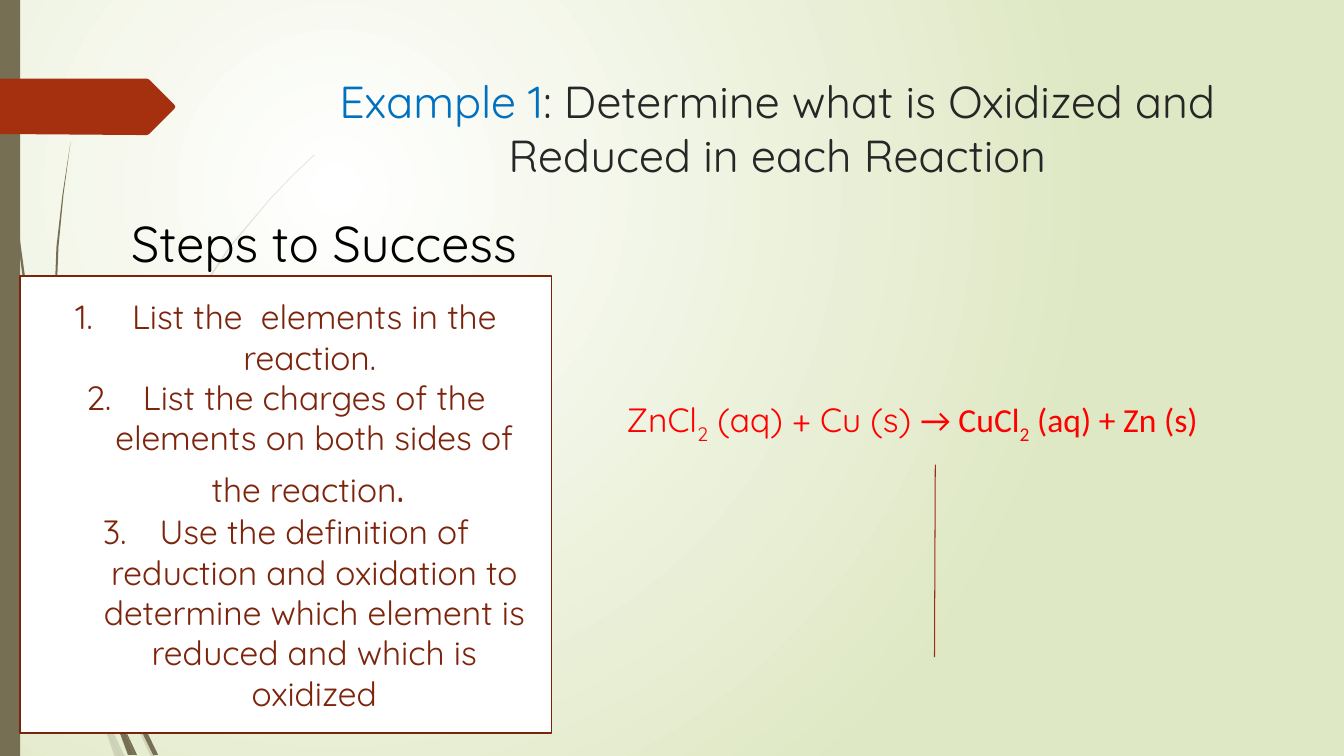
from dataclasses import dataclass, field

from pptx import Presentation
from pptx.dml.color import RGBColor
from pptx.enum.shapes import MSO_CONNECTOR as CONN, MSO_SHAPE as SHAPE
from pptx.enum.text import MSO_ANCHOR as ANCHOR, MSO_AUTO_SIZE as AUTO, PP_ALIGN as ALIGN
from pptx.oxml import parse_xml
from pptx.oxml.ns import nsdecls, qn
from pptx.oxml.xmlchemy import OxmlElement
from pptx.util import Cm, Pt

OLIVE, RUST, BROWN = "766F54", "A53010", "7C240C"
BLUE, INK, RED = "0070C0", "262626", "FF0000"
POINT_UNIT = Cm(0.0254)  # outline points are hundredths of an inch


@dataclass
class Run:
    text: str
    size: float
    color: str
    font: str = "Quicksand"
    baseline: int = 0


@dataclass
class Outline:
    points: list[tuple[int, int]]
    color: str = OLIVE
    alpha: int = 100


@dataclass
class TextBox:
    box: tuple[float, float, float, float]
    runs: list[Run]
    fmt: dict = field(default_factory=lambda: {"word_wrap": True})


FAINT_WISPS = [
    [(11, 350), (9, 322), (0, 282), (0, 299), (10, 344)],
    [(58, 522), (84, 599), (85, 586), (62, 520), (14, 345), (17, 376)],
    [(92, 607), (88, 596), (88, 610), (123, 694), (150, 751), (155, 751), (127, 692)],
    [(119, 751), (124, 751), (105, 711)],
    [(93, 683), (70, 619), (31, 469), (17, 376), (11, 350), (28, 470), (65, 621),
     (92, 693), (101, 714), (99, 707)],
    [(88, 584), (110, 462), (160, 349), (229, 245), (268, 198), (290, 175), (312, 154),
     (312, 153), (289, 175), (268, 197), (228, 244), (158, 348), (107, 461), (85, 584),
     (85, 586), (88, 596)],
    [(101, 714), (114, 751), (119, 751)],
    [(96, 692), (93, 683), (99, 707), (101, 714), (119, 751), (105, 711)],
]
SOLID_WISPS = [
    [(7, 110), (17, 233), (33, 355), (56, 477), (57, 481), (55, 457), (55, 453), (36, 355),
     (19, 232), (8, 109), (5, 48), (4, 0), (3, 0), (4, 48)],
    [(113, 649), (110, 641), (111, 656), (132, 708), (152, 749), (157, 749), (136, 706)],
    [(60, 472), (58, 453), (54, 349), (58, 245), (63, 193), (70, 141), (62, 193), (56, 245),
     (52, 349), (55, 449)],
    [(133, 749), (136, 749), (122, 719)],
    [(117, 722), (127, 749), (131, 749)],
    [(116, 706), (110, 691), (116, 717), (117, 722), (130, 749), (133, 749), (122, 719)],
]
TITLE_TAG = [(173, 108), (148, 133), (146, 134), (136, 134), (0, 133), (0, 78), (136, 78),
             (146, 78), (148, 79), (173, 104), (174, 106)]

TEXTS = [
    TextBox((7.21, 1.73, 24.77, 3.56), [
        Run("Example 1", 32, BLUE),
        Run(": Determine what is Oxidized and Reduced in each Reaction", 32, INK),
    ]),
    TextBox((13.51, 6.6, 18.95, 10.49), [
        Run("ZnCl", 24, RED),
        Run("2", 24, RED, baseline=-25),
        Run(" (aq) + Cu (s) ", 24, RED),
        Run("→ CuCl", 24, RED, "Calibri"),
        Run("2", 24, RED, "Calibri", -25),
        Run(" (aq) + Zn (s)", 24, RED, "Calibri"),
    ], {"word_wrap": True, "margin_top": Cm(3.46)}),
    TextBox((2.82, 5.23, 10.69, 1.8), [Run("Steps to Success", 36, "000000")],
            {"word_wrap": False, "auto_size": AUTO.SHAPE_TO_FIT_TEXT}),
]
STEPS = [
    [Run("List the  elements in the reaction. ", 24, BROWN)],
    [Run("List the charges of the elements on both sides of the reaction", 24, BROWN),
     Run(". ", 32, BROWN)],
    [Run("Use the definition of reduction and oxidation to determine which element is "
         "reduced and which is oxidized", 24, BROWN)],
]


def rgb(color: str) -> RGBColor:
    return RGBColor.from_string(color)


def paint(sp, color: str) -> None:
    sp.shadow.inherit = False
    sp.fill.solid()
    sp.fill.fore_color.rgb = rgb(color)
    sp.line.fill.background()


def set_background(s) -> None:
    """Radial gradient, white at a quarter of the width and height."""
    s.element.cSld.insert(0, parse_xml(
        f'<p:bg {nsdecls("p", "a")}><p:bgPr><a:gradFill rotWithShape="1"><a:gsLst>'
        '<a:gs pos="0"><a:srgbClr val="FFFFFF"/></a:gs>'
        '<a:gs pos="100000"><a:srgbClr val="DFE8C4"/></a:gs></a:gsLst>'
        '<a:path path="circle"><a:fillToRect l="50000" t="50000" r="100000" b="100000"/>'
        '</a:path></a:gradFill><a:effectLst/></p:bgPr></p:bg>'))


def draw_outline(s, outline: Outline) -> None:
    builder = s.shapes.build_freeform(*outline.points[0], scale=POINT_UNIT)
    builder.add_line_segments(outline.points[1:], close=True)
    sp = builder.convert_to_shape()
    paint(sp, outline.color)
    if outline.alpha < 100:
        alpha = OxmlElement("a:alpha")
        alpha.set("val", str(outline.alpha * 1000))
        sp.element.spPr.find(".//" + qn("a:srgbClr")).append(alpha)


def draw_rect(s, box: tuple[float, float, float, float], color: str):
    sp = s.shapes.add_shape(SHAPE.RECTANGLE, *map(Cm, box))
    paint(sp, color)
    return sp


def write_runs(p, runs: list[Run]) -> None:
    p.alignment = ALIGN.CENTER
    for run in runs:
        r = p.add_run()
        r.text = run.text
        for name, value in {"size": Pt(run.size), "name": run.font}.items():
            setattr(r.font, name, value)
        r.font.color.rgb = rgb(run.color)
        if run.baseline:
            r._r.get_or_add_rPr().set("baseline", str(run.baseline * 1000))


def draw_text(s, text: TextBox) -> None:
    tf = s.shapes.add_textbox(*map(Cm, text.box)).text_frame
    for name, value in text.fmt.items():
        setattr(tf, name, value)
    write_runs(tf.paragraphs[0], text.runs)


def draw_steps(s) -> None:
    sp = draw_rect(s, (0.51, 6.96, 13.39, 11.51), "FFFFFF")
    sp.line.color.rgb = rgb("7A240C")
    sp.line.width = Pt(1.25)
    tf = sp.text_frame
    tf.word_wrap = True
    tf.vertical_anchor = ANCHOR.MIDDLE
    for i, runs in enumerate(STEPS):
        p = tf.add_paragraph() if i else tf.paragraphs[0]
        write_runs(p, runs)
        pPr = p._p.get_or_add_pPr()
        indent = Cm(1.43)
        pPr.set("marL", str(indent))
        pPr.set("indent", str(-indent))
        number = OxmlElement("a:buAutoNum")
        number.set("type", "arabicPeriod")
        pPr.append(number)


def draw_divider(s) -> None:
    line = s.shapes.add_connector(CONN.STRAIGHT, *map(Cm, (23.57, 11.71, 23.55, 16.56)))
    line.line.color.rgb = rgb("9E2E0F")
    line.line.width = Pt(0.75)
    line.element.spPr.append(OxmlElement("a:effectLst"))


def main() -> None:
    prs = Presentation()
    prs.slide_width, prs.slide_height = Cm(33.87), Cm(19.05)
    s = prs.slides.add_slide(prs.slide_layouts[6])
    set_background(s)
    for points in FAINT_WISPS:
        draw_outline(s, Outline(points, alpha=20))
    for points in SOLID_WISPS:
        draw_outline(s, Outline(points))
    draw_rect(s, (0, 0, 0.51, 19.05), OLIVE)
    draw_outline(s, Outline(TITLE_TAG, RUST))
    draw_steps(s)
    draw_divider(s)
    for text in TEXTS:
        draw_text(s, text)
    prs.save("out.pptx")


if __name__ == "__main__":
    main()
